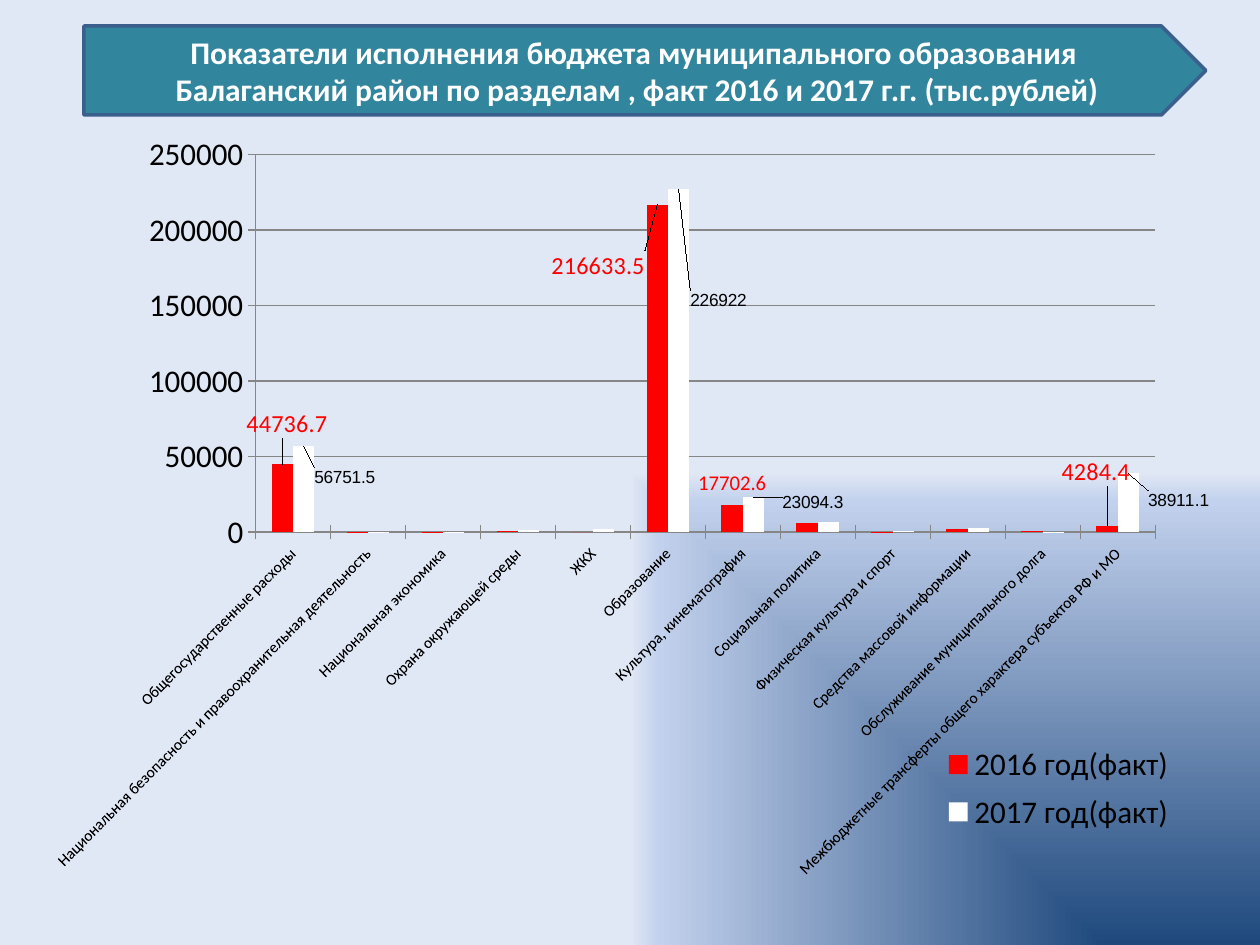
from lxml import etree
from pptx import Presentation
from pptx.chart.data import CategoryChartData
from pptx.dml.color import RGBColor
from pptx.enum.chart import XL_CHART_TYPE, XL_LABEL_POSITION, XL_LEGEND_POSITION, XL_TICK_MARK
from pptx.enum.shapes import MSO_SHAPE
from pptx.enum.text import MSO_ANCHOR, PP_ALIGN
from pptx.oxml import parse_xml
from pptx.oxml.ns import nsdecls, qn
from pptx.util import Pt

PX = 914400 // 126
RED = RGBColor(0xFF, 0x00, 0x00)
WHITE = RGBColor(0xFF, 0xFF, 0xFF)
BLACK = RGBColor(0x00, 0x00, 0x00)
GREY = RGBColor(0x86, 0x86, 0x86)
TEAL = RGBColor(0x31, 0x85, 0x9C)
NAVY = RGBColor(0x3A, 0x5F, 0x8C)

CHART_LEFT, CHART_TOP, CHART_WIDTH, CHART_HEIGHT = 54, 125, 1155, 774


def write(paragraph, text, *, size, color, font="Calibri", bold=False, align=PP_ALIGN.CENTER):
    run = paragraph.add_run()
    run.text = text
    run.font.name = font
    run.font.size = Pt(size)
    run.font.bold = bold
    run.font.color.rgb = color
    paragraph.alignment = align


def manual_layout(**values):
    layout = parse_xml(f"<c:layout {nsdecls('c')}><c:manualLayout/></c:layout>")
    for tag, value in values.items():
        etree.SubElement(layout[0], qn(f"c:{tag}")).set("val", str(value))
    return layout


prs = Presentation()
prs.slide_width = 1260 * PX
prs.slide_height = 945 * PX
slide = prs.slides.add_slide(prs.slide_layouts[6])

stops = "".join(
    f'<a:gs pos="{pos}"><a:srgbClr val="{color}"/></a:gs>'
    for pos, color in [(0, "1F497D"), (94000, "C2D1ED"), (100000, "E1E8F5")]
)
backdrop = parse_xml(
    f'<a:gradFill {nsdecls("a")} rotWithShape="1"><a:gsLst>{stops}</a:gsLst>'
    '<a:path path="rect"><a:fillToRect l="100000" t="100000"/></a:path></a:gradFill>'
)
slide.background.fill.solid()
solid = slide.element.find(".//" + qn("p:bgPr")).find(qn("a:solidFill"))
solid.getparent().replace(solid, backdrop)

budget = CategoryChartData()
budget.categories = [
    "Общегосударственные расходы",
    "Национальная безопасность и правоохранительная деятельность",
    "Национальная экономика",
    "Охрана окружающей среды",
    "ЖКХ",
    "Образование",
    "Культура, кинематография",
    "Социальная политика",
    "Физическая культура и спорт",
    "Средства массовой информации",
    "Обслуживание муниципального долга",
    "Межбюджетные трансферты общего характера субъектов РФ и МО",
]
budget.add_series("2016 год(факт)", [
    44736.7, 12.2, 201, 367.6, 0, 216633.5, 17702.6, 6065.1, 28.9, 2235.8, 372.6, 4284.4])
budget.add_series("2017 год(факт)", [
    56751.5, 40, 200, 1135.1, 2265, 226922, 23094.3, 6346.1, 774.4, 2703.1, 184.2, 38911.1])

chart = slide.shapes.add_chart(
    XL_CHART_TYPE.COLUMN_CLUSTERED, CHART_LEFT * PX, CHART_TOP * PX,
    CHART_WIDTH * PX, CHART_HEIGHT * PX, budget,
).chart
chart.has_title = False
chart.font.name = "Calibri"
chart.font.size = Pt(18)
chart.font.color.rgb = BLACK

plot = chart.plots[0]
plot.gap_width = 150
plot.overlap = 0
plot.vary_by_categories = False
plot_area = plot._element.getparent()
for old in plot_area.findall(qn("c:layout")):
    plot_area.remove(old)
plot_area.insert(0, manual_layout(
    layoutTarget="inner", xMode="edge", yMode="edge", x=0.164, y=0.038, w=0.791, h=0.488))

sections, amounts = chart.category_axis, chart.value_axis
for axis in (sections, amounts):
    axis.major_tick_mark = XL_TICK_MARK.CROSS if axis is sections else XL_TICK_MARK.OUTSIDE
    axis.format.line.color.rgb = GREY
sections.tick_labels.font.size = Pt(9)
sections.tick_labels.font.color.rgb = BLACK
sections._element.find(qn("c:txPr")).find(qn("a:bodyPr")).set("rot", "-2700000")
amounts.minimum_scale = 0
amounts.maximum_scale = 250000
amounts.major_unit = 50000
amounts.major_gridlines.format.line.color.rgb = GREY

year_styles = [
    (RED, RED, "Calibri", {0: (5, -21, 14), 5: (-60, 81, 14), 6: (0, -5, 12), 11: (-12, -34, 14)}),
    (WHITE, BLACK, "Arial", {0: (42, 46, 10), 5: (40, 126, 10), 6: (60, 20, 10), 11: (51, 42, 10)}),
]
for year, (bar_color, label_color, label_font, shifts) in zip(plot.series, year_styles):
    year.format.fill.solid()
    year.format.fill.fore_color.rgb = bar_color
    year.invert_if_negative = False
    for index, (dx, dy, size) in shifts.items():
        label = year.points[index].data_label
        label.font.name = label_font
        label.font.size = Pt(size)
        label.font.color.rgb = label_color
        label.position = XL_LABEL_POSITION.OUTSIDE_END
        mark = year._element.find(qn("c:dLbls")).findall(qn("c:dLbl"))[-1]
        mark.find(qn("c:idx")).addnext(
            manual_layout(x=round(dx / CHART_WIDTH, 3), y=round(dy / CHART_HEIGHT, 3)))
    year.data_labels.show_value = False

chart.has_legend = True
legend = chart.legend
legend.position = XL_LEGEND_POSITION.RIGHT
legend.include_in_layout = False
for old in legend._element.findall(qn("c:layout")):
    legend._element.remove(old)
legend._element.find(qn("c:legendPos")).addnext(
    manual_layout(xMode="edge", yMode="edge", x=0.77, y=0.79, w=0.2, h=0.134))

banner = slide.shapes.add_shape(MSO_SHAPE.PENTAGON, 84 * PX, 26 * PX, 1122 * PX, 89 * PX)
banner.shadow.inherit = False
banner.fill.solid()
banner.fill.fore_color.rgb = TEAL
banner.line.color.rgb = NAVY
banner.line.width = Pt(2)
heading = banner.text_frame
heading.word_wrap = True
heading.vertical_anchor = MSO_ANCHOR.MIDDLE
write(heading.paragraphs[0], "Показатели исполнения бюджета муниципального образования",
      size=18, color=WHITE, bold=True)
write(heading.add_paragraph(), " Балаганский район по разделам , факт 2016 и 2017 г.г. (тыс.рублей)",
      size=18, color=WHITE, bold=True)

prs.save("out.pptx")
